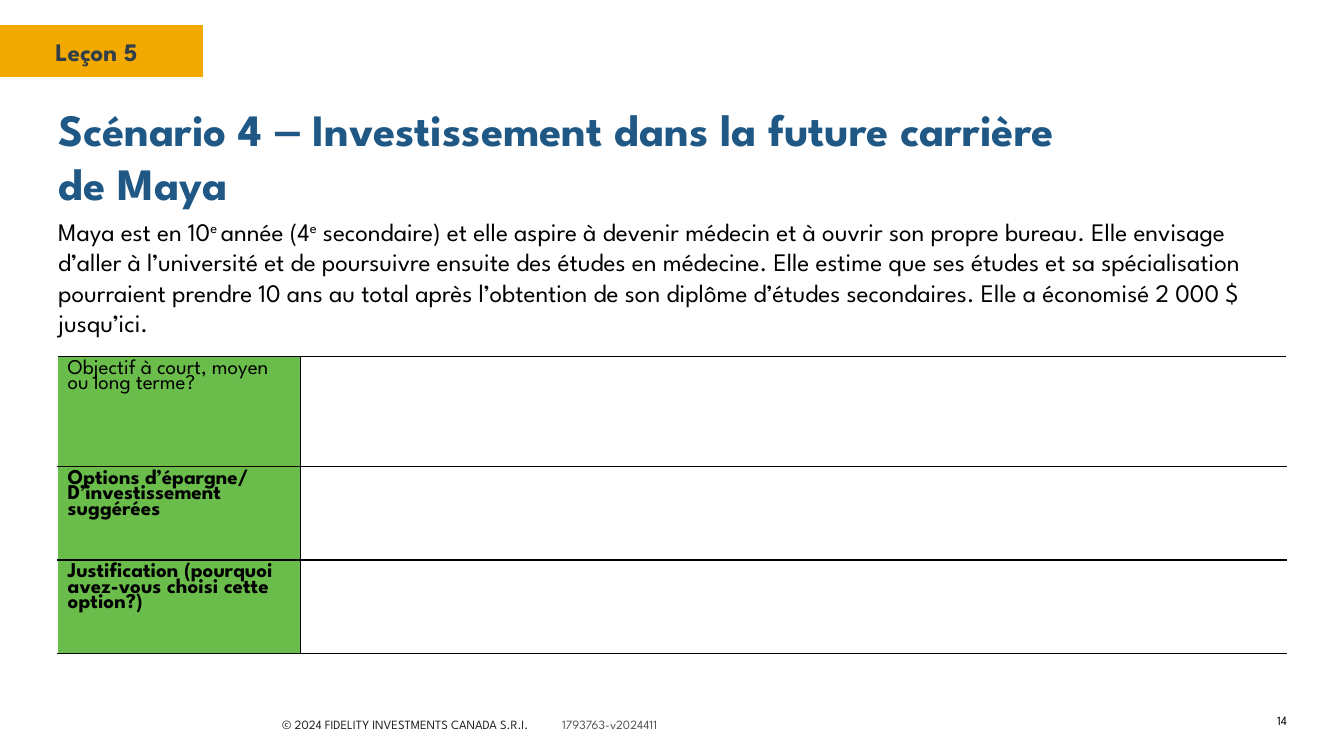
from pptx import Presentation
from pptx.dml.color import RGBColor
from pptx.enum.shapes import MSO_SHAPE
from pptx.enum.text import MSO_ANCHOR, MSO_AUTO_SIZE, PP_ALIGN
from pptx.oxml.ns import qn
from pptx.util import Pt
from lxml.etree import SubElement

FONT = "League Spartan"
BLACK, WHITE, GREEN = "000000", "FFFFFF", "6ABD4A"


def paint(hue):
    return RGBColor.from_string(hue)


def add_run(para, text, size, hue=BLACK, bold=False, face=FONT, base=0):
    run = para.add_run()
    run.text = text
    font = run.font
    font.size, font.bold, font.name = Pt(size), bold, face
    font.color.rgb = paint(hue)
    if base:
        font._element.set("baseline", str(base * 1000))


def add_box(slide, box, wrap=True):
    frame = slide.shapes.add_textbox(*map(Pt, box)).text_frame
    frame.word_wrap = wrap
    return frame


# Lesson tag at the top left
def add_tag(slide, box, text):
    x, y, w, h = box
    band = slide.shapes.add_shape(MSO_SHAPE.RECTANGLE, *map(Pt, box))
    band.shadow.inherit = False
    band.fill.solid()
    band.fill.fore_color.rgb = paint("F2A900")
    band.line.fill.background()
    frame = add_box(slide, (x + 32.4, y + 4.3, w - 50, h - 8))
    add_run(frame.paragraphs[0], text, 18, "333F48", True)


# Title in the title placeholder
def add_title(slide, box):
    title = slide.shapes.title
    title.left, title.top, title.width, title.height = map(Pt, box)
    frame = title.text_frame
    frame.auto_size = MSO_AUTO_SIZE.NONE
    frame.vertical_anchor = MSO_ANCHOR.TOP
    para = frame.paragraphs[0]
    para.alignment = PP_ALIGN.LEFT
    blue = "205885"
    add_run(para, "Scénario 4", 32, blue, True)
    add_run(para, " ‒ ", 32, blue, True, "Arial")
    add_run(para, "Investissement dans la future carrière", 32, blue, True)
    para.add_line_break()
    add_run(para, "de Maya", 32, blue, True)


# Story paragraph with raised ordinals
def add_story(slide, box):
    para = add_box(slide, box).paragraphs[0]
    for text, base in (
        ("Maya est en 10", 0),
        ("e ", 30),
        ("année (4", 0),
        ("e", 30),
        (" secondaire) et elle aspire à devenir médecin et à ouvrir son "
         "propre bureau. Elle envisage d’aller à l’université et de "
         "poursuivre ensuite des études en médecine. Elle estime que ses "
         "études et sa spécialisation pourraient prendre 10 ans au total "
         "après l’obtention de son diplôme d’études secondaires. Elle a "
         "économisé 2 000 $ jusqu’ici.", 0),
    ):
        add_run(para, text, 18, base=base)


def set_edges(cell, left, right):
    props = cell._tc.get_or_add_tcPr()
    for side, hue in zip("LRTB", (left, right, BLACK, BLACK)):
        line = SubElement(props, qn(f"a:ln{side}"), w=str(Pt(1)))
        fill = SubElement(line, qn("a:solidFill"))
        SubElement(fill, qn("a:srgbClr"), val=hue)


# Answer table: green labels, blank answers
def add_grid(slide, box, rows, split):
    x, y, w, h = box
    table = slide.shapes.add_table(len(rows), 2, *map(Pt, box)).table
    table.first_row = table.horz_banding = False
    table.columns[0].width = Pt(split)
    table.columns[1].width = Pt(w - split)
    for row, (high, bold, lines) in zip(table.rows, rows):
        row.height = Pt(high)
        label, blank = row.cells
        set_edges(label, WHITE, BLACK)
        set_edges(blank, BLACK, WHITE)
        label.fill.solid()
        label.fill.fore_color.rgb = paint(GREEN)
        blank.fill.background()
        frame = label.text_frame
        for i, text in enumerate(lines):
            para = frame.add_paragraph() if i else frame.paragraphs[0]
            para.line_spacing = 0.8
            add_run(para, text, 15, bold=bold)


# Copyright, document code and page number
def add_foot(slide, box):
    x, y, w, h = box
    para = add_box(slide, (x, y, 312, h), False).paragraphs[0]
    tabs = SubElement(para._p.get_or_add_pPr(), qn("a:tabLst"))
    SubElement(tabs, qn("a:tab"), pos=str(Pt(200)), algn="l")
    add_run(para, "© 2024 FIDELITY INVESTMENTS CANADA S.R.I.", 9, "222222")
    add_run(para, "\t1793763-v2024411", 9, "545454")
    frame = add_box(slide, (x + w - 50, y, 50, 13))
    frame.vertical_anchor = MSO_ANCHOR.MIDDLE
    frame.margin_top = frame.margin_bottom = 0
    para = frame.paragraphs[0]
    para.alignment = PP_ALIGN.RIGHT
    add_run(para, "14", 9)


def main():
    deck = Presentation()
    deck.slide_width, deck.slide_height = Pt(960), Pt(540)
    slide = deck.slides.add_slide(deck.slide_layouts[5])
    add_tag(slide, (0, 18, 145, 37), "Leçon 5")
    add_title(slide, (34.5, 69, 945, 52.5))
    add_story(slide, (34.5, 151, 885, 94.5))
    rows = (
        (78.5, False, ["Objectif à court, moyen ou long terme?"]),
        (66.7, True, ["Options d’épargne/", "D’investissement suggérées"]),
        (66.7, True,
         ["Justification (pourquoi avez-vous choisi cette option?)"]),
    )
    add_grid(slide, (41.2, 254.8, 878, 212), rows, 173.5)
    add_foot(slide, (194.4, 508.3, 732, 18))
    deck.save("out.pptx")


if __name__ == "__main__":
    main()
